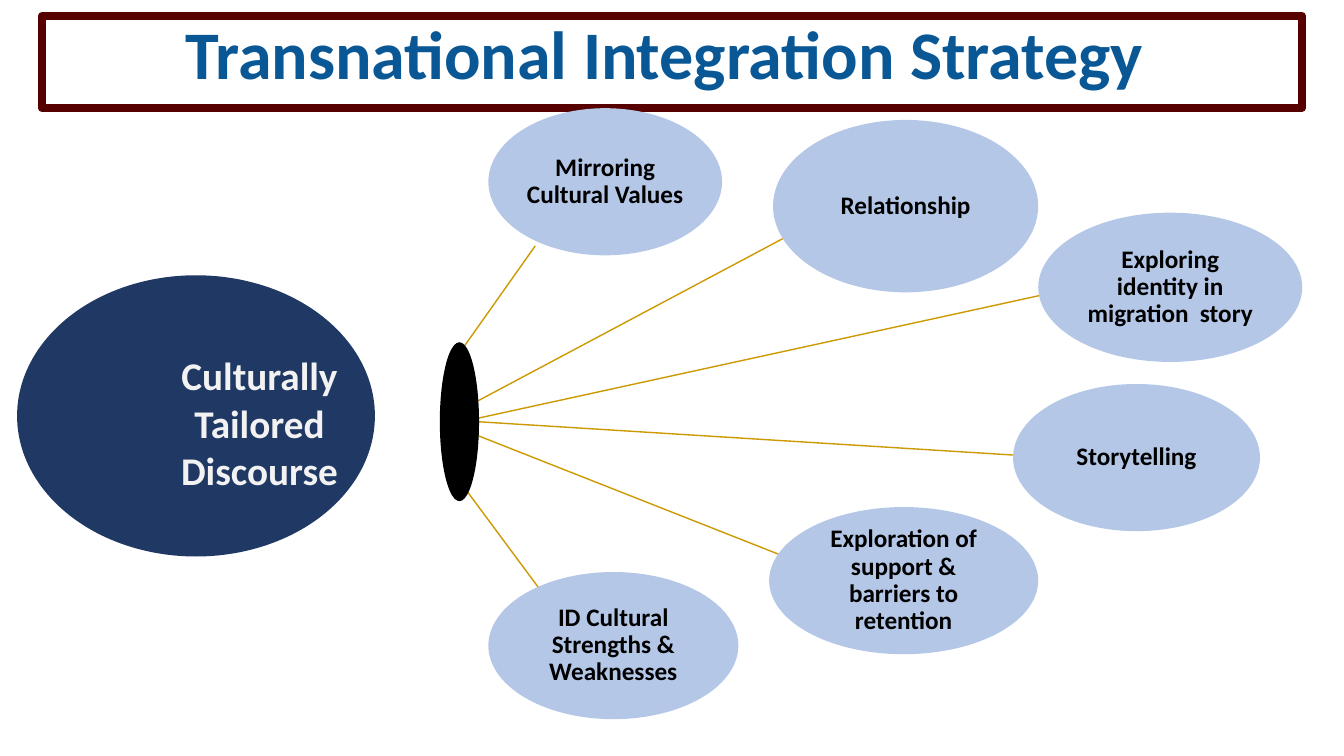
import pptx
import pptx.util
import pptx.dml.color
import pptx.enum.shapes
import pptx.enum.text
import pptx.oxml.ns
import lxml.etree

Pt = pptx.util.Pt
RGBColor = pptx.dml.color.RGBColor
Shape = pptx.enum.shapes.MSO_SHAPE

MAROON = RGBColor(0x56, 0x00, 0x00)
TITLE_BLUE = RGBColor(0x09, 0x58, 0x95)
NAVY = RGBColor(0x20, 0x38, 0x64)
LIGHT_BLUE = RGBColor(0xB4, 0xC7, 0xE7)
GOLD = RGBColor(0xCC, 0x9A, 0x00)
BLACK = RGBColor(0x00, 0x00, 0x00)
OFF_WHITE = RGBColor(0xF2, 0xF2, 0xF2)


def add_ellipse(slide, left, top, width, height, color):
    shape = slide.shapes.add_shape(Shape.OVAL, Pt(left), Pt(top), Pt(width), Pt(height))
    shape.shadow.inherit = False
    shape.fill.solid()
    shape.fill.fore_color.rgb = color
    shape.line.fill.background()
    return shape


def write_centered(shape, lines, size, color, spacing):
    frame = shape.text_frame
    frame.word_wrap = True
    frame.text = "\n".join(lines)
    for paragraph in frame.paragraphs:
        paragraph.alignment = pptx.enum.text.PP_ALIGN.CENTER
        paragraph.line_spacing = spacing
        paragraph.font.name = "Calibri"
        paragraph.font.size = Pt(size)
        paragraph.font.bold = True
        paragraph.font.color.rgb = color
    return frame


presentation = pptx.Presentation()
presentation.slide_width = Pt(960)
presentation.slide_height = Pt(540)
slide = presentation.slides.add_slide(presentation.slide_layouts[6])

title = slide.shapes.add_shape(Shape.RECTANGLE, Pt(30), Pt(11.5), Pt(900), Pt(65.5))
title.shadow.inherit = False
title.fill.background()
title.line.color.rgb = MAROON
title.line.width = Pt(6)
frame = write_centered(title, ["Transnational Integration Strategy"], 48.6, TITLE_BLUE, 0.9)
frame.vertical_anchor = pptx.enum.text.MSO_ANCHOR.MIDDLE
frame.margin_right = Pt(18)
frame.margin_bottom = Pt(10)

spokes = [
    (323.3, 337, 384.5, 419.5),
    (324.7, 304.6, 556.5, 396),
    (324.7, 300.2, 724.5, 325.1),
    (324.7, 302.4, 743.5, 210.9),
    (324.7, 295.2, 560, 170),
    (319.7, 264.2, 382.3, 175.7),
]
for start_x, start_y, end_x, end_y in spokes:
    connector = slide.shapes.add_connector(
        pptx.enum.shapes.MSO_CONNECTOR.STRAIGHT,
        Pt(start_x), Pt(start_y), Pt(end_x), Pt(end_y))
    connector.line.color.rgb = GOLD
    connector.line.width = Pt(1)
    properties = connector.element.spPr
    lxml.etree.SubElement(properties, pptx.oxml.ns.qn("a:effectLst"))

add_ellipse(slide, 12.2, 196.6, 255.6, 200.9, NAVY)

themes = [
    ("Mirroring Cultural Values", 348.8, 77.3, 167, 105.1, 0.7),
    ("Relationship", 552.2, 85.7, 189.4, 123.1, 0.7),
    ("Exploring identity in migration  story", 741.6, 151.9, 188.6, 106.6, 5),
    ("Storytelling", 723.6, 274.3, 176.4, 105.1, 0.7),
    ("Exploration of support & barriers to retention", 549.4, 362.2, 192.2, 105.1, 0.7),
    ("ID Cultural Strengths & Weaknesses", 348.8, 408.6, 178.6, 105.1, 0.7),
]
for label, left, top, width, height, side_margin in themes:
    theme = add_ellipse(slide, left, top, width, height, LIGHT_BLUE)
    frame = write_centered(theme, [label], 18, BLACK, 0.9)
    frame.vertical_anchor = pptx.enum.text.MSO_ANCHOR.MIDDLE
    frame.margin_left = frame.margin_right = Pt(side_margin)
    frame.margin_top = frame.margin_bottom = Pt(0.7)

discourse = slide.shapes.add_textbox(Pt(102.2), Pt(247.7), Pt(166.3), Pt(108.7))
write_centered(discourse, ["Culturally Tailored", "Discourse"], 28, OFF_WHITE, 1.0)

add_ellipse(slide, 314.2, 244.5, 28, 113.5, BLACK)

presentation.save("out.pptx")
